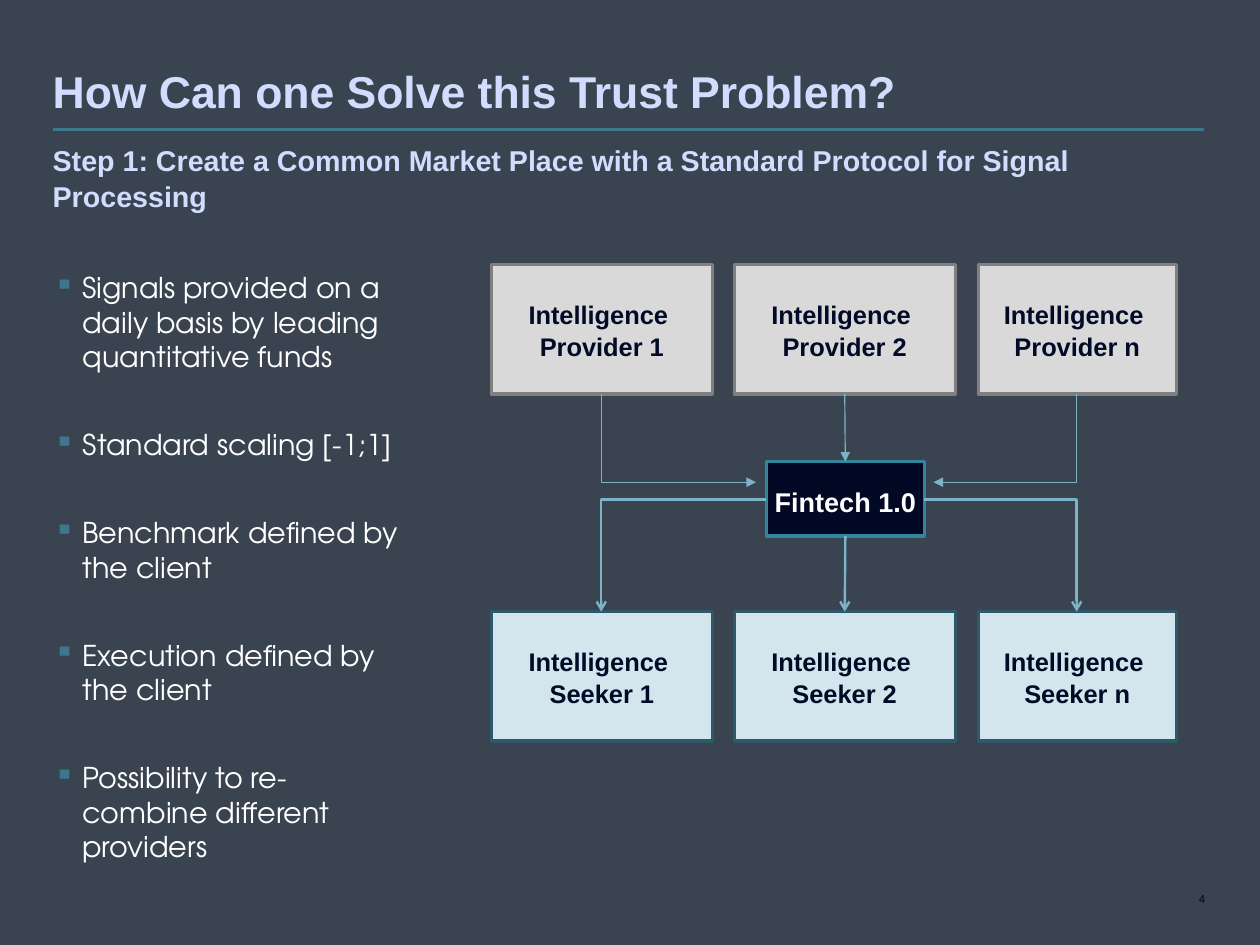
"""Build the slide on solving the trust problem with a common market place."""
import pptx
import pptx.util
import pptx.dml.color
import pptx.enum.shapes
import pptx.enum.text
import pptx.oxml
import pptx.oxml.ns

Inches, Pt = pptx.util.Inches, pptx.util.Pt
RGBColor = pptx.dml.color.RGBColor
ALIGN, ANCHOR = pptx.enum.text.PP_ALIGN, pptx.enum.text.MSO_ANCHOR
CONNECTOR = pptx.enum.shapes.MSO_CONNECTOR
SLATE = RGBColor(0x39, 0x44, 0x50)
TEAL = RGBColor(0x3C, 0x77, 0x8D)
LAVENDER = RGBColor(0xD1, 0xDC, 0xFE)
NAVY = RGBColor(0x01, 0x0A, 0x27)
HUB_FILL = RGBColor(0x01, 0x09, 0x25)
HUB_LINE = RGBColor(0x31, 0x85, 0x9C)
GREY_FILL = RGBColor(0xD9, 0xD9, 0xD9)
GREY_LINE = RGBColor(0x80, 0x80, 0x80)
ICE_FILL = RGBColor(0xD4, 0xE6, 0xED)
ICE_LINE = RGBColor(0x2D, 0x59, 0x6A)
ARROW = RGBColor(0x7D, 0xB3, 0xC8)
WHITE = RGBColor(0xFF, 0xFF, 0xFF)

prs = pptx.Presentation()
prs.slide_width, prs.slide_height = Inches(11), Inches(8.25)
s = prs.slides.add_slide(prs.slide_layouts[6])
s.background.fill.solid()
s.background.fill.fore_color.rgb = SLATE


def write(sp, lines, size, color, font="Arial", bold=True, align=ALIGN.LEFT,
          anchor=ANCHOR.TOP, spacing=1.0, margin=0):
    tf = sp.text_frame
    tf.word_wrap = True
    tf.vertical_anchor = anchor
    tf.margin_left = tf.margin_right = tf.margin_top = tf.margin_bottom = Inches(margin)
    for i, line in enumerate(lines):
        p = tf.add_paragraph() if i else tf.paragraphs[0]
        p.text = line
        p.alignment = align
        p.line_spacing = spacing
        for r in p.runs:
            r.font.name, r.font.size, r.font.bold = font, Pt(size), bold
            r.font.color.rgb = color
    return tf


def connect(kind, x1, y1, x2, y2, color, width, ends=()):
    c = s.shapes.add_connector(kind, Inches(x1), Inches(y1), Inches(x2), Inches(y2))
    c.line.color.rgb, c.line.width = color, Pt(width)
    if kind == CONNECTOR.ELBOW:
        c._element.spPr.find(pptx.oxml.ns.qn("a:prstGeom")).set("prst", "bentConnector2")
    ln = c.line._get_or_add_ln()
    for end, arrow in ends:
        ln.append(pptx.oxml.parse_xml(
            f'<a:{end} {pptx.oxml.ns.nsdecls("a")} type="{arrow}"/>'))
    c._element.spPr.append(pptx.oxml.parse_xml(
        f'<a:effectLst {pptx.oxml.ns.nsdecls("a")}/>'))
    return c


connect(CONNECTOR.STRAIGHT, 0.46, 1.13, 10.51, 1.13, TEAL, 2)

for text, box, size, color, style in [
    ("How Can one Solve this Trust Problem?", (0.46, 0, 10.05, 1.03), 28, LAVENDER,
     {"anchor": ANCHOR.BOTTOM, "spacing": 0.85}),
    ("Step 1: Create a Common Market Place with a Standard Protocol for Signal Processing",
     (0.46, 1.23, 10.09, 0.39), 18, LAVENDER, {"spacing": 1.06}),
    ("4", (10.07, 7.5, 0.45, 0.41), 7, NAVY,
     {"font": "Roboto", "bold": False, "align": ALIGN.RIGHT, "anchor": ANCHOR.BOTTOM}),
]:
    sp = s.shapes.add_textbox(*map(Inches, box))
    write(sp, [text], size, color, **style)

sp = s.shapes.add_textbox(Inches(0.47), Inches(2.36), Inches(3.13), Inches(4.82))
tf = write(sp, [
    "Signals provided on a daily basis by leading quantitative funds",
    "Standard scaling [-1;1]",
    "Benchmark defined by the client",
    "Execution defined by the client",
    "Possibility to re-combine different providers",
], 18, WHITE, font="TeX Gyre Adventor", bold=False)
for p in tf.paragraphs:
    p.space_after = Pt(33.8)
    pPr = p._p.get_or_add_pPr()
    pPr.set("marL", str(Inches(0.25)))
    pPr.set("indent", str(Inches(-0.25)))
    for xml in (f'<a:buClr {pptx.oxml.ns.nsdecls("a")}><a:srgbClr val="{TEAL}"/></a:buClr>',
                f'<a:buChar {pptx.oxml.ns.nsdecls("a")} char="▪"/>'):
        pPr.append(pptx.oxml.parse_xml(xml))

boxes = {}
rows = [("Provider", 2.31, GREY_FILL, GREY_LINE), ("Seeker", 5.34, ICE_FILL, ICE_LINE)]
columns = [("1", 4.29, 1.93), ("2", 6.41, 1.93), ("n", 8.54, 1.73)]
cells = [(f"Intelligence \n{role} {n}", (x, y, w, 1.13), fill, line, 2, 16, NAVY, 0.05, 1.06)
         for role, y, fill, line in rows for n, x, w in columns]
hub = ("Fintech 1.0", (6.69, 4.03, 1.38, 0.65), HUB_FILL, HUB_LINE, 2.25, 17, WHITE, 0, 1.2)
for text, box, fill, line, width, size, color, margin, spacing in cells + [hub]:
    sp = s.shapes.add_shape(pptx.enum.shapes.MSO_SHAPE.RECTANGLE, *map(Inches, box))
    sp.shadow.inherit = False
    sp.fill.solid()
    sp.fill.fore_color.rgb = fill
    sp.line.color.rgb, sp.line.width = line, Pt(width)
    write(sp, [text], size, color, align=ALIGN.CENTER, anchor=ANCHOR.MIDDLE,
          spacing=spacing, margin=margin)
    boxes[text.split("\n")[-1]] = sp

for x, provider_end, hub_side in [(5.25, 6.6, 6.69), (9.4, 8.15, 8.07)]:
    connect(CONNECTOR.ELBOW, provider_end, 4.21, x, 3.44, ARROW, 0.75,
            [("headEnd", "triangle")])
    connect(CONNECTOR.ELBOW, hub_side, 4.36, x, 5.34, ARROW, 1.5, [("tailEnd", "arrow")])

for start, end, y1, y2, width, arrow in [
    ("Provider 2", "Fintech 1.0", 3.44, 4.03, 0.75, "triangle"),
    ("Fintech 1.0", "Seeker 2", 4.68, 5.34, 1.5, "arrow"),
]:
    c = connect(CONNECTOR.STRAIGHT, 7.38, y1, 7.38, y2, ARROW, width, [("tailEnd", arrow)])
    c.begin_connect(boxes[start], 2)
    c.end_connect(boxes[end], 0)

prs.save("out.pptx")
